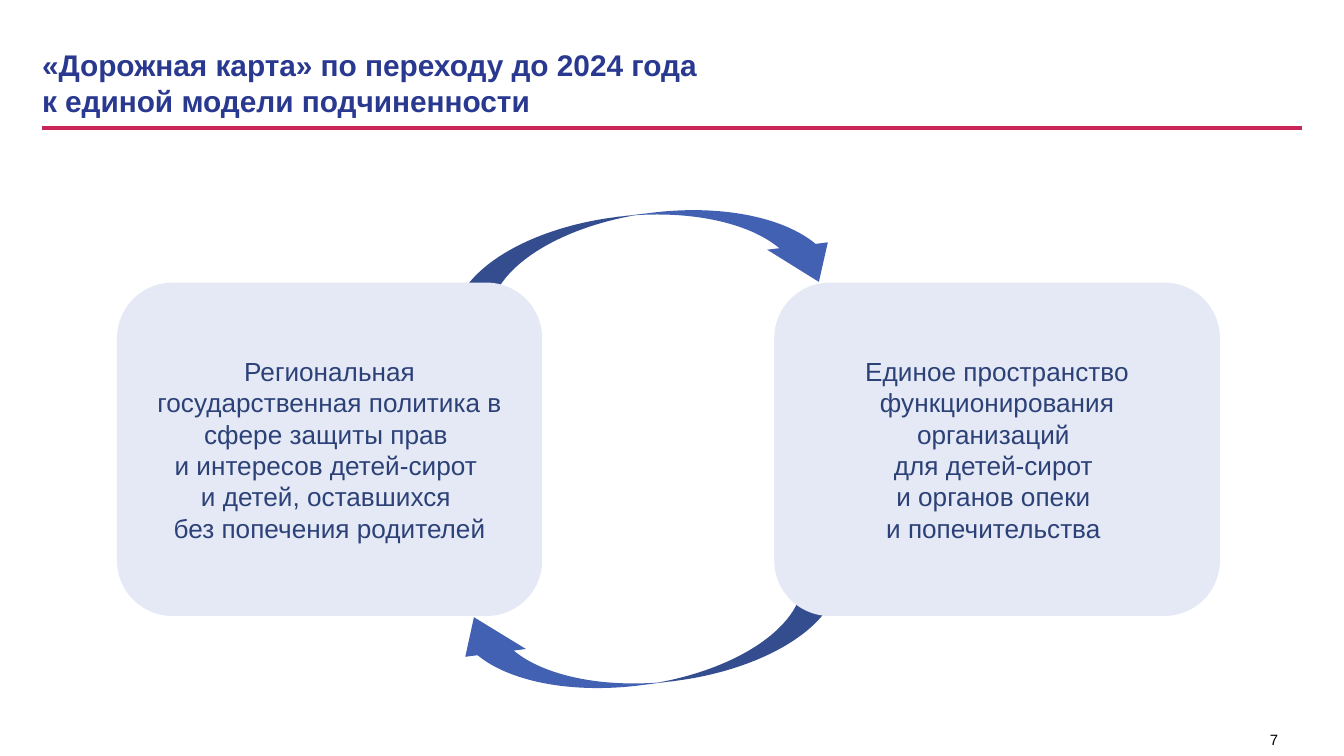
import lxml.etree
import pptx
import pptx.dml.color
import pptx.enum.shapes
import pptx.enum.text
import pptx.oxml.ns
import pptx.util

SHAPES = pptx.enum.shapes.MSO_SHAPE
ALIGN = pptx.enum.text.PP_ALIGN
ANCHOR = pptx.enum.text.MSO_ANCHOR


def color(value):
    return pptx.dml.color.RGBColor.from_string(value)


def points(*values):
    return [pptx.util.Pt(value) for value in values]


class RoadmapSlide:
    """Draw the elements of the roadmap slide in one shared style."""

    font = "Arial"
    title_color = "2A3990"
    rule_color = "CB2458"
    arrow_color = "4261B2"
    card_color = "E4E9F5"
    card_text_color = "2C4177"
    arrow_bends = (0.41, 0.69, 0.43)

    def __init__(self, presentation):
        self.slide = presentation.slides.add_slide(presentation.slide_layouts[5])

    def set_text(self, frame, text, size, ink, align, bold=False):
        frame.text = text
        for paragraph in frame.paragraphs:
            paragraph.alignment = align
            for run in paragraph.runs:
                run.font.name = self.font
                run.font.size = pptx.util.Pt(size)
                run.font.bold = bold
                run.font.color.rgb = color(ink)

    def title(self, text, left, top, width, height):
        heading = self.slide.shapes.title
        heading.left, heading.top, heading.width, heading.height = points(left, top, width, height)
        frame = heading.text_frame
        frame.margin_left = frame.margin_right = frame.margin_top = frame.margin_bottom = 0
        frame.auto_size = pptx.enum.text.MSO_AUTO_SIZE.NONE
        frame.vertical_anchor = ANCHOR.MIDDLE
        self.set_text(frame, text, 16, self.title_color, ALIGN.LEFT, bold=True)

    def rule(self, left, right, y):
        underline = self.slide.shapes.add_connector(
            pptx.enum.shapes.MSO_CONNECTOR.STRAIGHT, *points(left, y, right, y))
        underline.line.color.rgb = color(self.rule_color)
        underline.line.width = pptx.util.Pt(2)
        lxml.etree.SubElement(underline._element.spPr, pptx.oxml.ns.qn("a:effectLst"))

    def filled(self, preset, fill, *box):
        shape = self.slide.shapes.add_shape(preset, *points(*box))
        shape.shadow.inherit = False
        shape.fill.solid()
        shape.fill.fore_color.rgb = color(fill)
        shape.line.fill.background()
        return shape

    def arrow(self, top, rotation):
        transition = self.filled(SHAPES.CURVED_DOWN_ARROW, self.arrow_color, 239.8, top, 213.1, 47.5)
        transition.rotation = rotation
        for index, bend in enumerate(self.arrow_bends):
            transition.adjustments[index] = bend

    def card(self, text, left, width):
        card = self.filled(SHAPES.ROUNDED_RECTANGLE, self.card_color, left, 151.4, width, 178.6)
        card.text_frame.word_wrap = True
        card.text_frame.vertical_anchor = ANCHOR.MIDDLE
        self.set_text(card.text_frame, text, 14, self.card_text_color, ALIGN.CENTER)

    def page_number(self, number, left, top, width, height):
        label = self.slide.shapes.add_textbox(*points(left, top, width, height))
        label.text_frame.word_wrap = False
        self.set_text(label.text_frame, number, 8, "000000", ALIGN.LEFT)


def main():
    presentation = pptx.Presentation()
    presentation.slide_width, presentation.slide_height = points(720, 405)
    roadmap = RoadmapSlide(presentation)
    roadmap.page_number("7", 673.2, 388, 24.5, 17)
    roadmap.rule(22.5, 697.5, 68.5)
    roadmap.arrow(114.5, 353.1)
    roadmap.arrow(319, 172.7)
    roadmap.title("«Дорожная карта» по переходу до 2024 года \vк единой модели подчиненности",
                  22.5, 20.5, 630.7, 47.5)
    roadmap.card("Региональная государственная политика в сфере защиты прав \v"
                 "и интересов детей-сирот \vи детей, оставшихся \vбез попечения родителей",
                 62.7, 227.8)
    roadmap.card("Единое пространство функционирования организаций \v"
                 "для детей-сирот \vи органов опеки \vи попечительства ",
                 414.8, 238.8)
    presentation.save("out.pptx")


if __name__ == "__main__":
    main()
